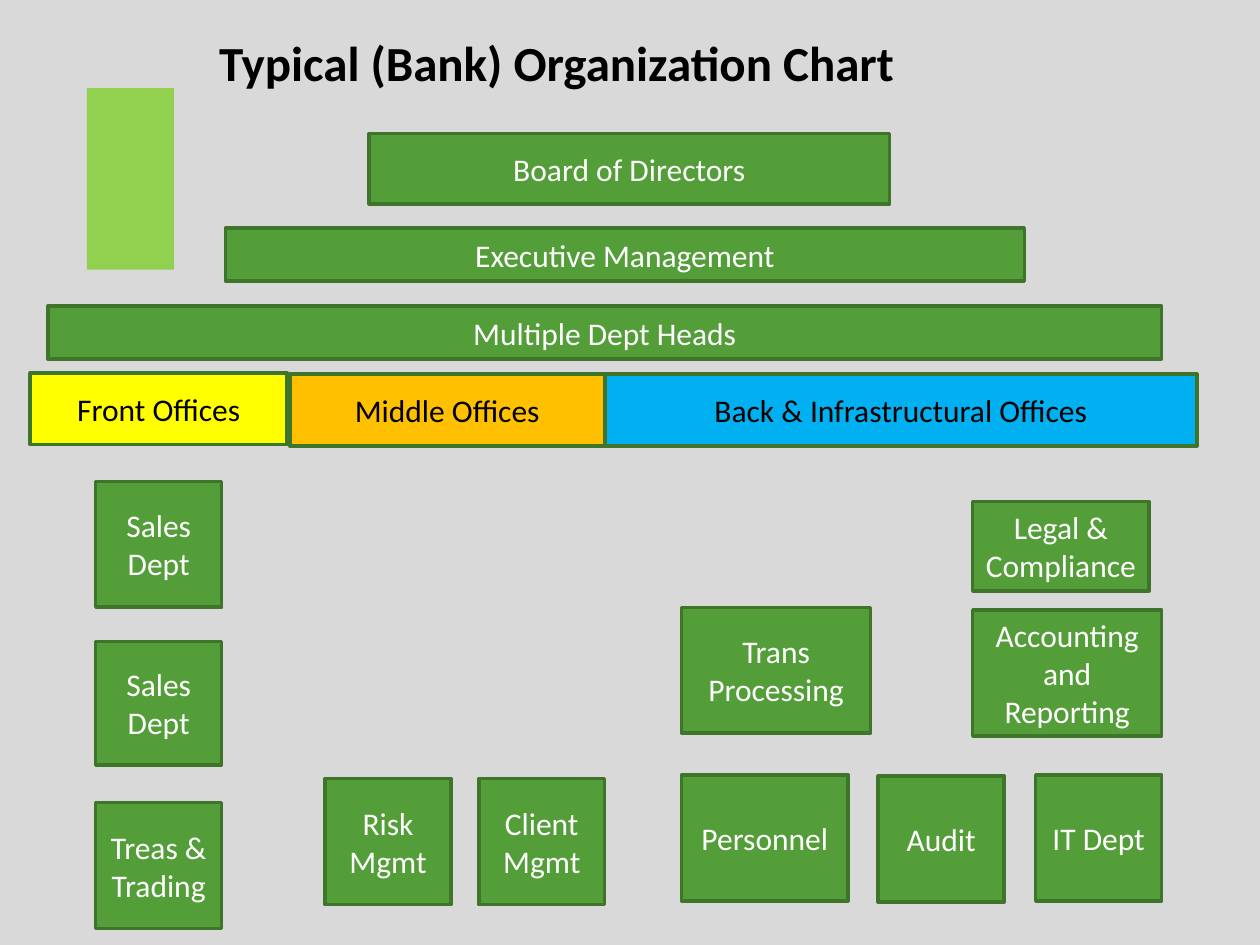
from pptx import Presentation
from pptx.dml.color import RGBColor
from pptx.enum.shapes import MSO_SHAPE
from pptx.enum.text import MSO_ANCHOR, PP_ALIGN
from pptx.util import Inches, Pt

BACKGROUND = RGBColor(0xD9, 0xD9, 0xD9)
GREEN = RGBColor(0x54, 0x9E, 0x39)
DARK_GREEN = RGBColor(0x3E, 0x75, 0x2A)
LIME = RGBColor(0x92, 0xD0, 0x50)
YELLOW = RGBColor(0xFF, 0xFF, 0x00)
ORANGE = RGBColor(0xFF, 0xC0, 0x00)
BLUE = RGBColor(0x00, 0xB0, 0xF0)
BLACK = RGBColor(0x00, 0x00, 0x00)
WHITE = RGBColor(0xFF, 0xFF, 0xFF)
FONT = "Calibri"

OFFICES = [
    ("Back & Infrastructural Offices", 4.8, 2.97, 4.7, BLUE),
    ("Middle Offices", 2.3, 2.97, 2.5, ORANGE),
    ("Front Offices", 0.24, 2.96, 2.04, YELLOW),
]
LEVELS = [
    ("Board of Directors", 2.93, 1.06, 4.13, 0.56),
    ("Executive Management", 1.79, 1.81, 6.34, 0.42),
    ("Multiple Dept Heads", 0.38, 2.43, 8.84, 0.42),
]
DEPARTMENTS = [
    ("Sales Dept", 0.76, 3.82, 1, 1),
    ("Sales Dept", 0.76, 5.09, 1, 0.98),
    ("Treas & Trading", 0.76, 6.37, 1, 1),
    ("Risk Mgmt", 2.58, 6.18, 1, 1),
    ("Client Mgmt", 3.8, 6.18, 1, 1),
    ("Trans Processing", 5.41, 4.82, 1.5, 1),
    ("Personnel", 5.41, 6.15, 1.32, 1),
    ("Audit", 6.97, 6.16, 1, 1),
    ("IT Dept", 8.22, 6.15, 1, 1),
    ("Legal & Compliance", 7.72, 3.98, 1.4, 0.71),
    ("Accounting and Reporting", 7.72, 4.84, 1.5, 1),
]


def add_span(para, text, size, color, bold=False):
    """Add one formatted run to a paragraph."""
    span = para.add_run()
    span.text = text
    span.font.name = FONT
    span.font.size = Pt(size)
    span.font.bold = bold
    span.font.color.rgb = color


def add_block(page, left, top, width, height, fill):
    """Add a plain filled rectangle without an outline."""
    box = page.shapes.add_shape(
        MSO_SHAPE.RECTANGLE, Inches(left), Inches(top), Inches(width), Inches(height)
    )
    box.shadow.inherit = False
    box.fill.solid()
    box.fill.fore_color.rgb = fill
    box.line.fill.background()
    return box


def add_unit(page, text, left, top, width, height, fill=GREEN, color=WHITE):
    """Add an outlined organization unit with a centred label."""
    box = add_block(page, left, top, width, height, fill)
    box.line.color.rgb = DARK_GREEN
    box.line.width = Pt(2)
    frame = box.text_frame
    frame.word_wrap = True
    frame.vertical_anchor = MSO_ANCHOR.MIDDLE
    para = frame.paragraphs[0]
    para.alignment = PP_ALIGN.CENTER
    add_span(para, text, 18, color)


def add_title(page, text):
    """Add the slide title."""
    box = page.shapes.add_textbox(Inches(1.64), Inches(0.21), Inches(7.7), Inches(0.57))
    box.text_frame.word_wrap = True
    add_span(box.text_frame.paragraphs[0], text, 28, BLACK, bold=True)


def main():
    """Build the organization chart and save the deck."""
    deck = Presentation()
    deck.slide_width = Inches(10)
    deck.slide_height = Inches(7.5)
    page = deck.slides.add_slide(deck.slide_layouts[6])
    page.background.fill.solid()
    page.background.fill.fore_color.rgb = BACKGROUND

    add_block(page, 0.69, 0.7, 0.69, 1.44, LIME)
    add_title(page, "Typical (Bank) Organization Chart")
    for unit in LEVELS + DEPARTMENTS:
        add_unit(page, *unit)
    for text, left, top, width, fill in OFFICES:
        add_unit(page, text, left, top, width, 0.57, fill, BLACK)
    deck.save("out.pptx")


if __name__ == "__main__":
    main()
